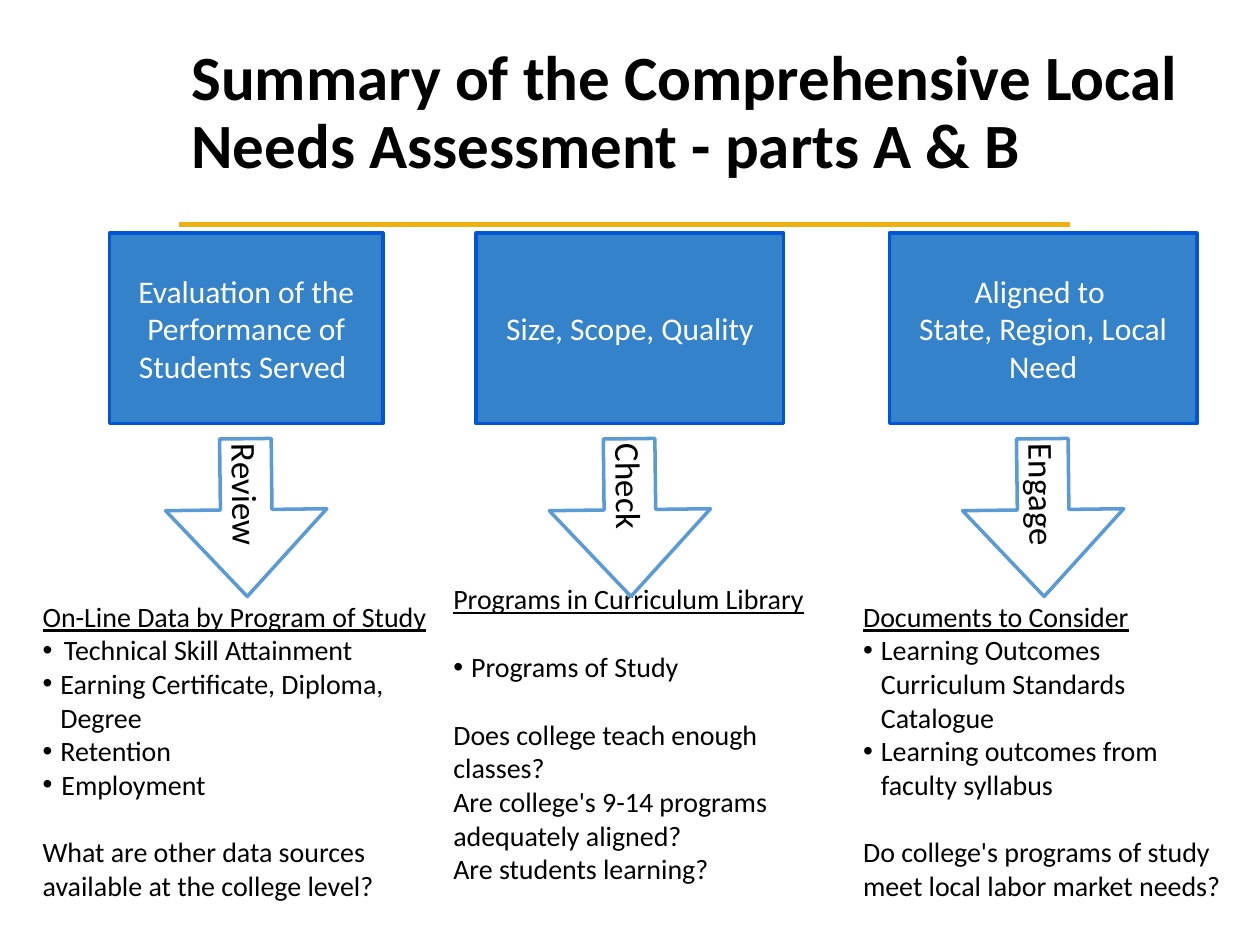
"""Build the summary slide of the comprehensive local needs assessment."""
from lxml.etree import SubElement
from pptx import Presentation
from pptx.dml.color import RGBColor
from pptx.enum.shapes import MSO_CONNECTOR, MSO_SHAPE
from pptx.enum.text import MSO_ANCHOR as ANCHOR, MSO_AUTO_SIZE as AUTO, PP_ALIGN as ALIGN
from pptx.oxml.ns import qn
from pptx.util import Cm, Pt

BLACK = RGBColor(0x00, 0x00, 0x00)
WHITE = RGBColor(0xFF, 0xFF, 0xFF)
GOLD = RGBColor(0xEE, 0xB1, 0x11)
BOX_FILL = RGBColor(0x34, 0x82, 0xC9)
BOX_LINE = RGBColor(0x00, 0x56, 0xD6)
ARROW_LINE = RGBColor(0x5B, 0x9B, 0xD5)
MARGIN = Cm(0.1)
BLANK_LINE = Pt(19.5)

COLUMNS = [
    dict(box=(2.21, 5.51), label=["Evaluation of the Performance of Students Served "],
         action="Review", notes=(0.76, 8.43, 6.35), heading="On-Line Data by Program of Study",
         heading_gap=0,
         bullets=[("Technical Skill Attainment", 0.43),
                  ("Earning Certificate, Diploma, Degree", 0.36),
                  ("Retention", 0.36), ("Employment", 0.38)],
         questions=["What are other data sources available at the college level?"]),
    dict(box=(9.6, 6.2), label=["Size, Scope, Quality"],
         action="Check", notes=(9.04, 7.37, 5.66), heading="Programs in Curriculum Library",
         heading_gap=BLANK_LINE,
         bullets=[("Programs of Study", 0.36)],
         questions=["Does college teach enough classes?",
                    "Are college's 9-14 programs adequately aligned?",
                    "Are students learning?"]),
    dict(box=(17.93, 6.2), label=["Aligned to ", "State, Region, Local", "Need"],
         action="Engage", notes=(17.3, 7.47, 6.35), heading="Documents to Consider",
         heading_gap=0,
         bullets=[("Learning Outcomes Curriculum Standards Catalogue", 0.36),
                  ("Learning outcomes from faculty syllabus", 0.36)],
         questions=["Do college's programs of study meet local labor market needs?"]),
]


def format_text(tf, size, color, align=ALIGN.LEFT):
    tf.word_wrap = True
    tf.vertical_anchor = ANCHOR.MIDDLE
    tf.margin_left = tf.margin_right = tf.margin_top = tf.margin_bottom = MARGIN
    for p in tf.paragraphs:
        p.alignment = align
        for r in p.runs:
            r.font.name = "Calibri"
            r.font.size = Pt(size)
            r.font.color.rgb = color


def add_block(s, kind, x, y, w, h, fill, line):
    sp = s.shapes.add_shape(kind, Cm(x), Cm(y), Cm(w), Cm(h))
    sp.shadow.inherit = False
    sp.fill.solid()
    sp.fill.fore_color.rgb = fill
    sp.line.color.rgb = line
    sp.line.width = Pt(2)
    return sp


prs = Presentation()
prs.slide_width, prs.slide_height = Cm(25.4), Cm(19.05)
s = prs.slides.add_slide(prs.slide_layouts[5])

rule = s.shapes.add_connector(MSO_CONNECTOR.STRAIGHT, Cm(3.61), Cm(4.52), Cm(21.56), Cm(4.52))
rule.line.color.rgb = GOLD
rule.line.width = Pt(3)
SubElement(rule.line._get_or_add_ln(), qn("a:round"))
SubElement(rule._element.spPr, qn("a:effectLst"))

title = s.shapes.title
title.left, title.top, title.width, title.height = Cm(3.61), Cm(0.46), Cm(20.45), Cm(3.68)
tf = title.text_frame
tf.text = "Summary of the Comprehensive Local Needs Assessment - parts A & B"
format_text(tf, 36, BLACK)
tf.margin_left = tf.margin_right = Cm(0.25)
tf.auto_size = AUTO.NONE
tf.paragraphs[0].line_spacing = 0.9
tf.paragraphs[0].runs[0].font.bold = True

for col in COLUMNS:
    x, w = col["box"]
    box = add_block(s, MSO_SHAPE.RECTANGLE, x, 4.7, w, 3.84, BOX_FILL, BOX_LINE)
    box.text_frame.text = "\n".join(col["label"])
    format_text(box.text_frame, 18, WHITE, ALIGN.CENTER)

    left, width, height = col["notes"]
    notes = s.shapes.add_textbox(Cm(left), Cm(11.96), Cm(width), Cm(height))
    tf = notes.text_frame
    bullets, questions = col["bullets"], col["questions"]
    tf.text = "\n".join([col["heading"], *(text for text, _ in bullets), *questions])
    paragraphs = tf.paragraphs
    for p, (_, indent) in zip(paragraphs[1:], bullets):
        pPr = p._p.get_or_add_pPr()
        pPr.set("marL", str(Cm(indent)))
        pPr.set("indent", str(-Cm(indent)))
        SubElement(pPr, qn("a:buFont")).set("typeface", "Arial")
        SubElement(pPr, qn("a:buChar")).set("char", "•")
    format_text(tf, 16, BLACK)
    tf.auto_size = AUTO.SHAPE_TO_FIT_TEXT
    paragraphs[0].runs[0].font.underline = True
    paragraphs[1].space_before = col["heading_gap"]
    paragraphs[1 + len(bullets)].space_before = BLANK_LINE

    arrow = add_block(s, MSO_SHAPE.RIGHT_ARROW, x + w / 2 - 1.59, 8.81, 3.18, 3.25,
                      WHITE, ARROW_LINE)
    arrow.rotation = 89.3
    arrow.adjustments[0], arrow.adjustments[1] = 0.32, 0.55
    arrow.text_frame.text = col["action"]
    format_text(arrow.text_frame, 20, BLACK)

prs.save("out.pptx")
